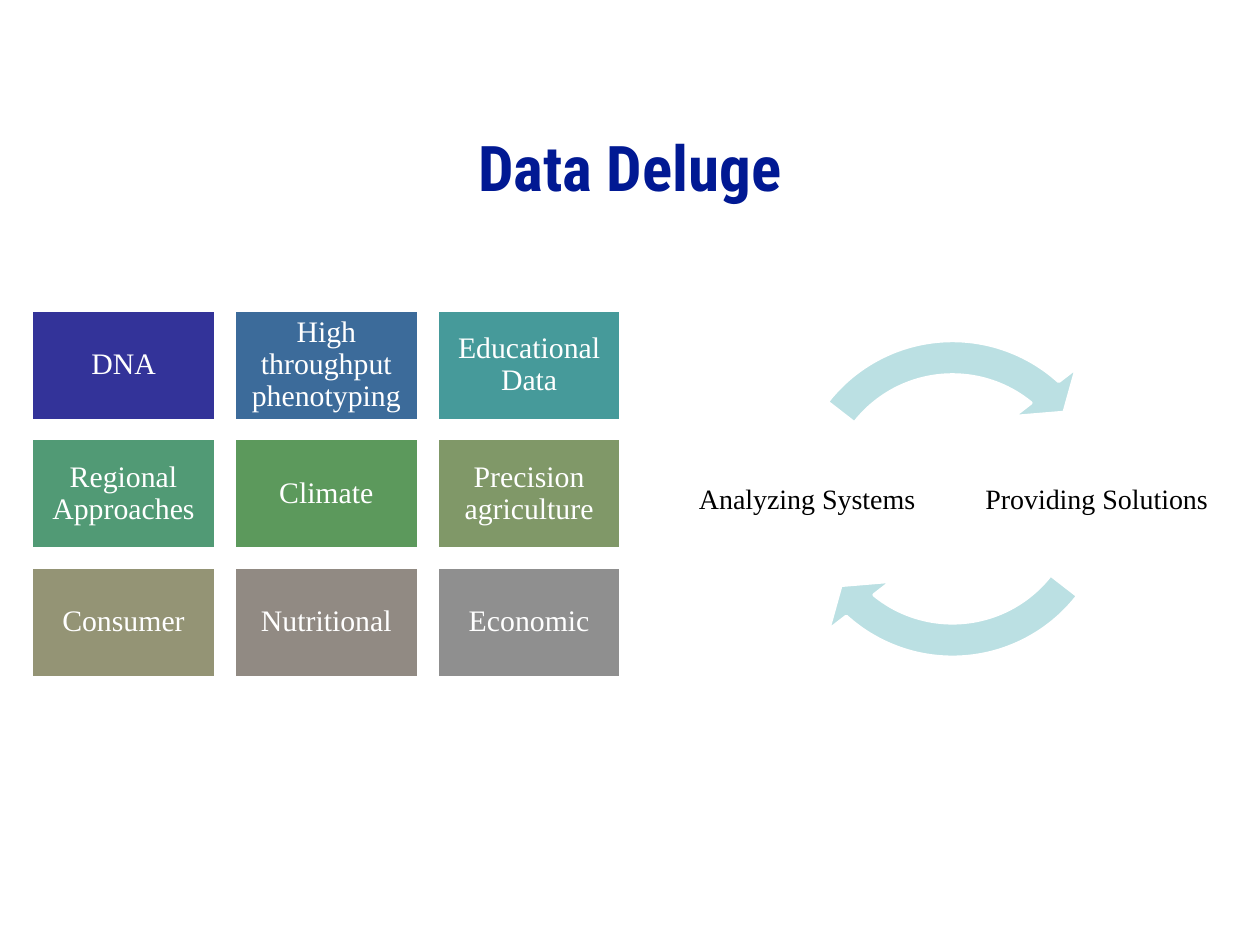
from pptx import Presentation
from pptx.dml.color import RGBColor
from pptx.enum.shapes import MSO_SHAPE as Shape
from pptx.enum.text import MSO_ANCHOR as Anchor, PP_ALIGN as Align
from pptx.util import Pt

SERIF = "Times New Roman"
TOPICS = [
    ("DNA", "333399"),
    ("High throughput phenotyping", "3C6B9A"),
    ("Educational Data", "469A9A"),
    ("Regional Approaches", "519A75"),
    ("Climate", "5C995C"),
    ("Precision agriculture", "809868"),
    ("Consumer", "949475"),
    ("Nutritional", "918A83"),
    ("Economic", "8F8F8F"),
]
COLUMNS = 3
GRID_LEFT, GRID_TOP = 18, 177.1
TILE_WIDTH, TILE_HEIGHT = 105.2, 63.2
COLUMN_STEP, ROW_STEP = 115.9, 73.45
HALF_TURN = 108


def color(hex_code):
    return RGBColor.from_string(hex_code)


def write(holder, words, size, ink, font=SERIF, bold=False, inset=0, spacing=0.9):
    frame = holder.text_frame
    frame.word_wrap = True
    frame.vertical_anchor = Anchor.MIDDLE
    frame.margin_left = frame.margin_right = Pt(inset)
    frame.margin_top = frame.margin_bottom = Pt(inset)
    line = frame.paragraphs[0]
    line.alignment = Align.CENTER
    line.line_spacing = spacing
    run = line.add_run()
    run.text = words
    run.font.name = font
    run.font.size = Pt(size)
    run.font.bold = bold
    run.font.color.rgb = color(ink)


def add_label(slide, words, left, top, width, height, size, ink, **style):
    label = slide.shapes.add_textbox(Pt(left), Pt(top), Pt(width), Pt(height))
    write(label, words, size, ink, **style)


def add_filled(slide, preset, left, top, width, height, fill):
    shape = slide.shapes.add_shape(preset, Pt(left), Pt(top), Pt(width), Pt(height))
    shape.shadow.inherit = False
    shape.fill.solid()
    shape.fill.fore_color.rgb = color(fill)
    shape.line.color.rgb = color("FFFFFF")
    shape.line.width = Pt(2)
    return shape


def add_cycle_arrow(slide, turn):
    arrow = add_filled(slide, Shape.CIRCULAR_ARROW, 440.6, 181.4, 207.4, 207.4, "BBE0E3")
    settings = (0.095, 6.849, 78.509 + turn, 22.642 + turn, 0.111)
    for index, value in enumerate(settings):
        arrow.adjustments[index] = value


def add_topic_grid(slide):
    for index, (topic, fill) in enumerate(TOPICS):
        row, column = divmod(index, COLUMNS)
        tile = add_filled(slide, Shape.RECTANGLE,
                          GRID_LEFT + column * COLUMN_STEP, GRID_TOP + row * ROW_STEP,
                          TILE_WIDTH, TILE_HEIGHT, fill)
        write(tile, topic, 17, "FFFFFF", inset=5)


def add_cycle(slide):
    add_label(slide, "Providing Solutions", 534.2, 235.4, 185, 100.8, 16, "000000", inset=1.5)
    add_cycle_arrow(slide, 0)
    add_label(slide, "Analyzing Systems", 369.4, 235.4, 183.6, 100.8, 16, "000000", inset=1.5)
    add_cycle_arrow(slide, HALF_TURN)


def main():
    deck = Presentation()
    deck.slide_width, deck.slide_height = Pt(720), Pt(540)
    slide = deck.slides.add_slide(deck.slide_layouts[6])
    add_label(slide, "Data Deluge", 36, 64, 648, 62, 36, "011993",
              font="Roboto Condensed", bold=True, spacing=1.0)
    add_cycle(slide)
    add_topic_grid(slide)
    deck.save("out.pptx")


if __name__ == "__main__":
    main()
